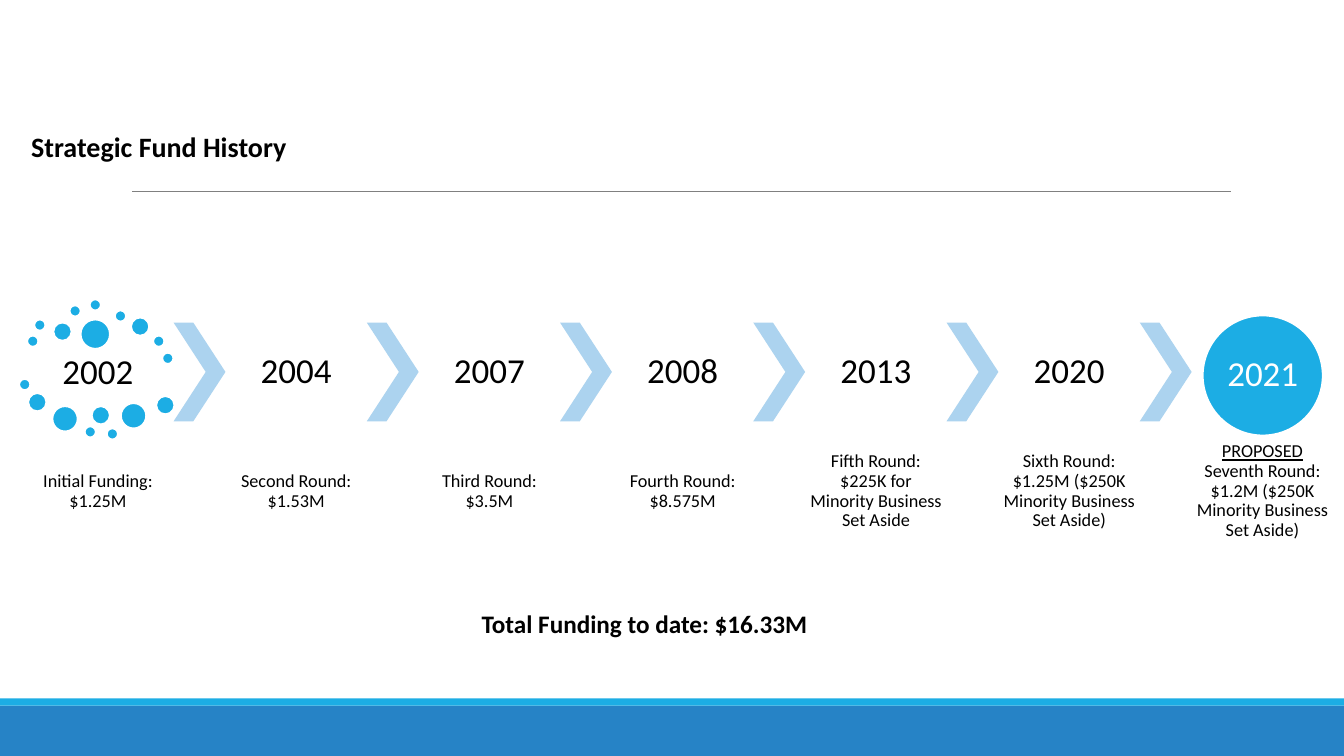
from lxml.etree import SubElement
from pptx import Presentation
from pptx.dml.color import RGBColor
from pptx.enum.shapes import MSO_CONNECTOR, MSO_SHAPE
from pptx.enum.text import MSO_ANCHOR, MSO_AUTO_SIZE, PP_ALIGN
from pptx.oxml.ns import qn
from pptx.util import Inches, Pt

BLUE, DEEP_BLUE, PALE_BLUE = "1CADE4", "2683C6", "ACD3EF"
BLACK, WHITE, GREY = "000000", "FFFFFF", "808080"

# Slide grid: ten columns and ten rows to the inch.
COLUMNS, ROWS = 133.33, 75
FIRST_STAGE, STAGE_STEP, STAGE_WIDTH = 3.2, 19.17, 14.02
CHEVRON_WIDTH = STAGE_STEP - STAGE_WIDTH
CHEVRON_TOP, CHEVRON_HEIGHT = 32, 9.8

STAGES = [
    ("2002", "Initial Funding: $1.25M"),
    ("2004", "Second Round: $1.53M"),
    ("2007", "Third Round: $3.5M"),
    ("2008", "Fourth Round: $8.575M"),
    ("2013", "Fifth Round: $225K for Minority Business Set Aside"),
    ("2020", "Sixth Round: $1.25M ($250K Minority Business Set Aside)"),
]
PROPOSED_YEAR = "2021"
PROPOSED_ROUND = " Seventh Round: $1.2M ($250K Minority Business Set Aside)"

# Dots around the first year: diameter, then left and top of each dot.
DOTS = {
    1.1: [(2.7, 33.3), (3.4, 31.7), (6.9, 30.3), (8.9, 29.7), (11.4, 30.8),
          (15.2, 33.3), (16.1, 35), (1.9, 37.6), (8.4, 42.3), (10.6, 42.5)],
    1.8: [(5.3, 32), (13, 31.5), (2.8, 39), (9.1, 40.3), (15.5, 39.3)],
    2.5: [(5.2, 40.3), (12, 40)],
    2.9: [(8, 31.7)],
}


def color(hex_string):
    return RGBColor.from_string(hex_string)


def cells(count):
    """Length of a number of grid columns or rows."""
    return Inches(count / 10)


class SlideBuilder:
    font_name = "Calibri"
    line_spacing = 0.9

    def __init__(self, presentation):
        self.slide = presentation.slides.add_slide(presentation.slide_layouts[6])

    def shape(self, kind, left, top, width, height, fill, outline=None):
        shape = self.slide.shapes.add_shape(kind, *map(cells, (left, top, width, height)))
        shape.shadow.inherit = False
        shape.fill.solid()
        shape.fill.fore_color.rgb = color(fill)
        if outline:
            shape.line.color.rgb = color(outline)
            shape.line.width = Pt(1.25)
        else:
            shape.line.fill.background()
        return shape

    def circle(self, left, top, diameter):
        return self.shape(MSO_SHAPE.OVAL, left, top, diameter, diameter, BLUE, WHITE)

    def chevron(self, left):
        chevron = self.shape(MSO_SHAPE.CHEVRON, left, CHEVRON_TOP,
                             CHEVRON_WIDTH, CHEVRON_HEIGHT, PALE_BLUE)
        chevron.adjustments[0] = 0.62

    def rule(self, left, right, row):
        connector = self.slide.shapes.add_connector(
            MSO_CONNECTOR.STRAIGHT, *map(cells, (left, row, right, row)))
        connector.line.color.rgb = color(GREY)
        connector.line.width = Pt(0.5)
        SubElement(connector.element.spPr, qn("a:effectLst"))

    def text_box(self, left, top, width, height):
        return self.slide.shapes.add_textbox(*map(cells, (left, top, width, height)))

    def set_text(self, shape, text, size, text_color=BLACK, bold=False,
                 align=PP_ALIGN.CENTER, anchor=MSO_ANCHOR.MIDDLE, insets=(0.2, 0.2)):
        """Set the text of a shape and return its paragraph; insets are across, down."""
        frame = shape.text_frame
        frame.word_wrap = True
        frame.vertical_anchor = anchor
        frame.margin_left = frame.margin_right = cells(insets[0])
        frame.margin_top = frame.margin_bottom = cells(insets[1])
        paragraph = frame.paragraphs[0]
        paragraph.add_run().text = text
        paragraph.alignment = align
        paragraph.line_spacing = self.line_spacing
        paragraph.font.name = self.font_name
        paragraph.font.size = Pt(size)
        paragraph.font.bold = bold
        paragraph.font.color.rgb = color(text_color)
        return paragraph

    def frame(self):
        """Draw the footer bars, the title and the rule below it."""
        self.shape(MSO_SHAPE.RECTANGLE, 0, 70, COLUMNS, ROWS - 70, DEEP_BLUE)
        self.shape(MSO_SHAPE.RECTANGLE, 0, 69.3, COLUMNS, 0.7, BLUE)
        self.rule(13.1, 122.1, 19)
        title = self.set_text(self.text_box(3.1, 12.7, 93.3, 5.3), "Strategic Fund History",
                              20, bold=True, align=PP_ALIGN.LEFT, anchor=MSO_ANCHOR.TOP,
                              insets=(0, 0.5))
        title.space_before = Pt(12)
        title.space_after = Pt(2)

    def stage(self, index, year, funding):
        left = FIRST_STAGE + index * STAGE_STEP
        # The dotted first stage sits a little left of its column.
        text_left = left if index else left - 0.5
        year_top, year_height = (CHEVRON_TOP, CHEVRON_HEIGHT) if index else (34.7, 4.6)
        year_box = self.text_box(text_left, year_top, STAGE_WIDTH, year_height)
        self.set_text(year_box, year, 25, insets=(0.3, 0.3))
        self.set_text(self.text_box(text_left, 44.4, STAGE_WIDTH, 8.7), funding, 13)
        self.chevron(left + STAGE_WIDTH)

    def proposed_stage(self):
        left = FIRST_STAGE + len(STAGES) * STAGE_STEP
        circle = self.circle(left + 1.1, 31.3, 11.9)
        self.set_text(circle, PROPOSED_YEAR, 25, WHITE, insets=(0, 0))
        paragraph = self.set_text(self.text_box(left, 39.4, STAGE_WIDTH, 18.7), "PROPOSED", 13)
        paragraph.runs[0].font.underline = True
        paragraph.add_run().text = PROPOSED_ROUND

    def total(self):
        box = self.text_box(46.8, 59.9, 53.7, 4)
        paragraph = self.set_text(box, "Total Funding to date: $16.33M", 18, bold=True,
                                  align=PP_ALIGN.LEFT, anchor=MSO_ANCHOR.TOP, insets=(1, 0.5))
        paragraph.line_spacing = 1.0
        box.text_frame.auto_size = MSO_AUTO_SIZE.SHAPE_TO_FIT_TEXT


def main():
    presentation = Presentation()
    presentation.slide_width, presentation.slide_height = cells(COLUMNS), cells(ROWS)
    builder = SlideBuilder(presentation)
    builder.frame()
    for diameter, places in DOTS.items():
        for left, top in places:
            builder.circle(left, top, diameter)
    for index, (year, funding) in enumerate(STAGES):
        builder.stage(index, year, funding)
    builder.proposed_stage()
    builder.total()
    presentation.save("out.pptx")


if __name__ == "__main__":
    main()
